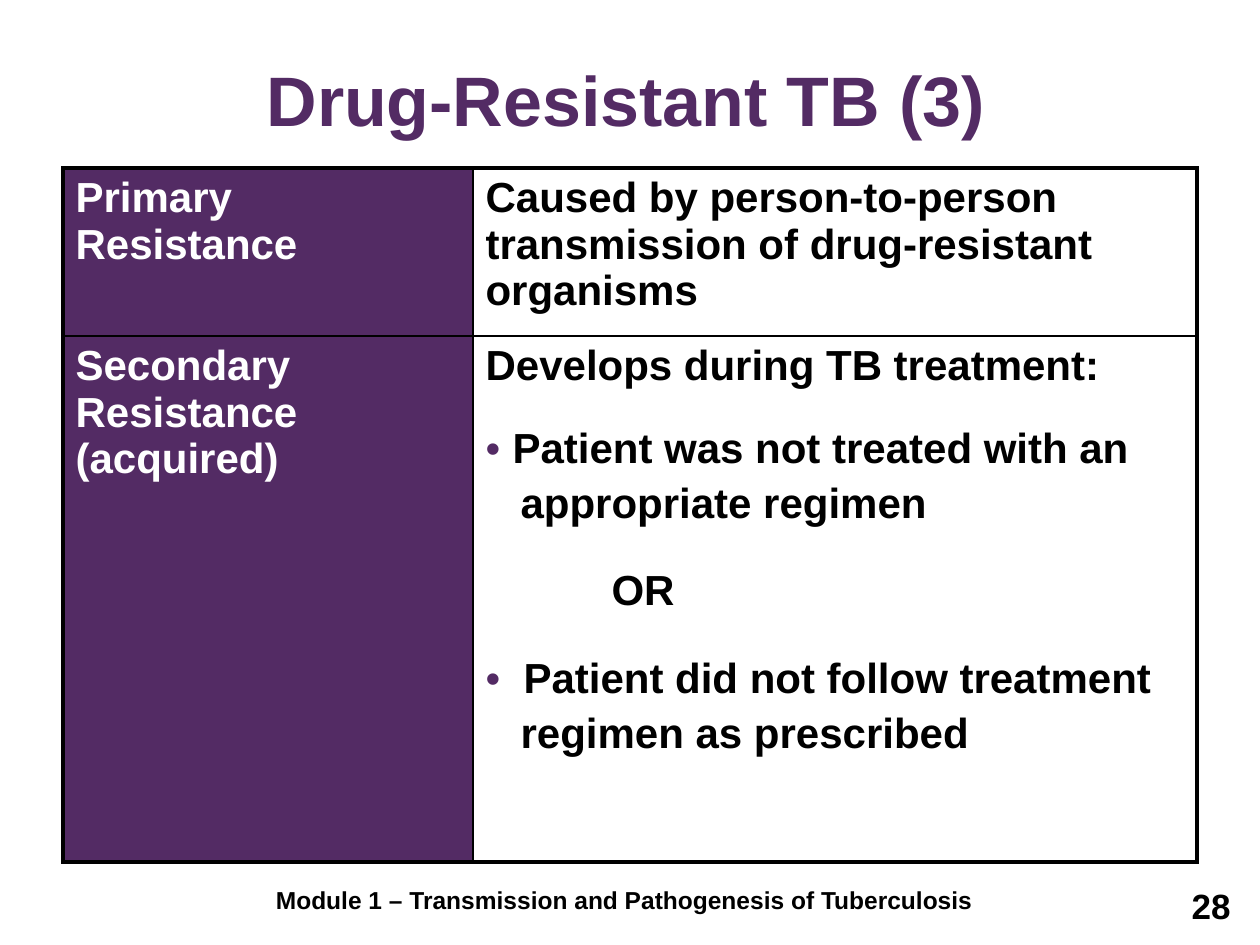
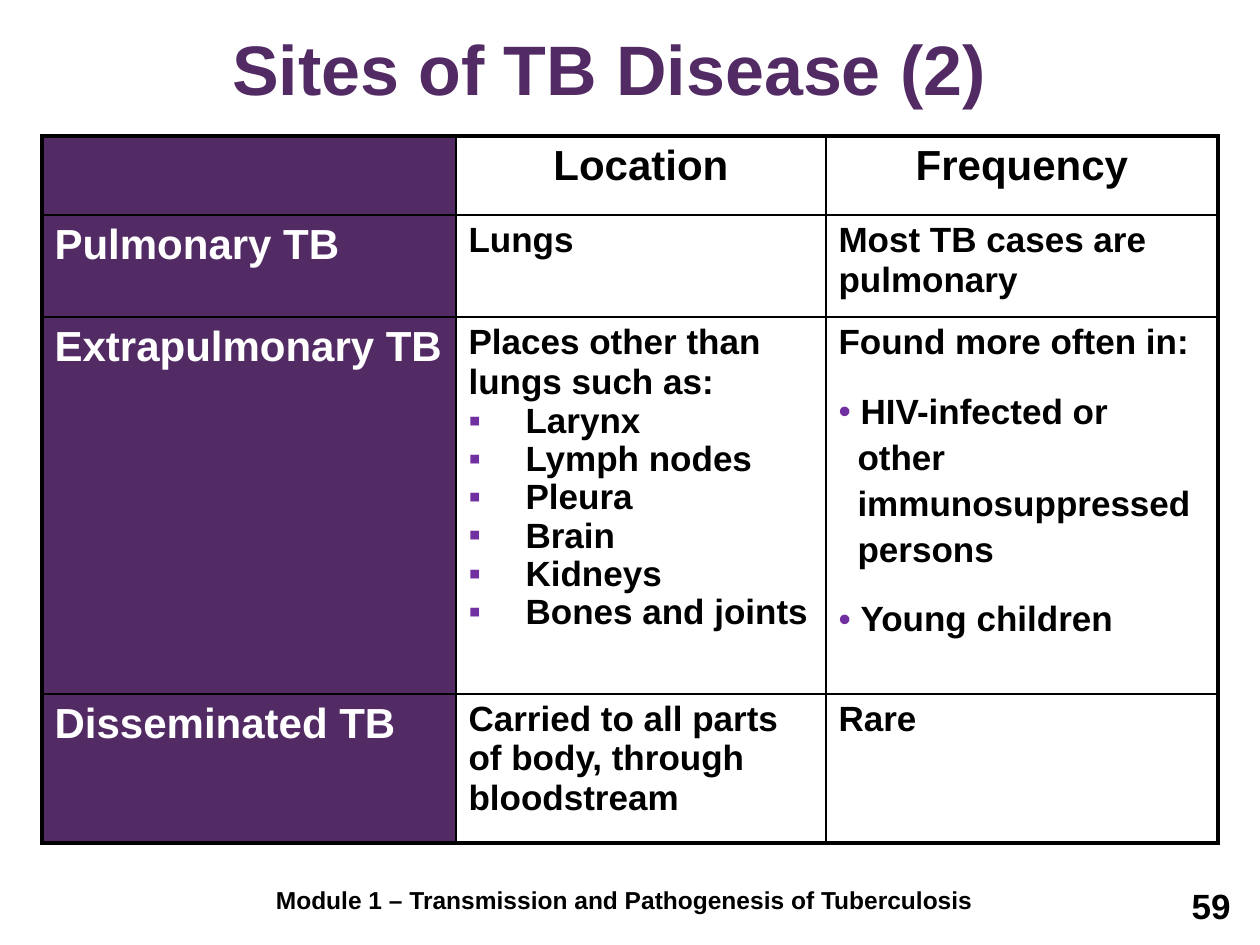
import dataclasses

import lxml.etree
import pptx
import pptx.dml.color
import pptx.enum.text
import pptx.oxml.ns
import pptx.util

PX = 914400 / 126
FONT = "Arial"
PURPLE = pptx.dml.color.RGBColor(0x53, 0x2B, 0x64)
VIOLET = pptx.dml.color.RGBColor(0x70, 0x30, 0xA0)
BLACK = pptx.dml.color.RGBColor(0, 0, 0)
WHITE = pptx.dml.color.RGBColor(255, 255, 255)
ALIGN = pptx.enum.text.PP_ALIGN
THICK, THIN = 2.25, 1
FOOTER = "Module 1 – Transmission and Pathogenesis of Tuberculosis"


@dataclasses.dataclass
class Line:
    """One paragraph of a cell: before in points, left and hang in px."""
    text: str
    before: float = 0
    left: int = 0
    hang: int = 0
    mark: str = ""
    tint: pptx.dml.color.RGBColor = VIOLET
    pitch: float = 1.0


def px(count):
    return pptx.util.Emu(round(count * PX))


def node(parent, tag, **attrs):
    return lxml.etree.SubElement(parent, pptx.oxml.ns.qn(tag), **attrs)


def style(par, size, color, align=ALIGN.LEFT):
    par.alignment = align
    for run in par.runs:
        font = run.font
        font.name, font.size, font.bold = FONT, pptx.util.Pt(size), True
        font.color.rgb = color


def indent(par, line):
    """Set the indent and, if the line has a mark, its bullet."""
    props = par._p.get_or_add_pPr()
    props.set("marL", str(px(line.left)))
    props.set("indent", str(px(-line.hang)))
    if line.mark:
        color = node(props, "a:buClr")
        node(color, "a:srgbClr", val=str(line.tint))
        node(props, "a:buFont", typeface=FONT)
        node(props, "a:buChar", char=line.mark)


def edge(cell, widths):
    """Draw the left, right, top and bottom borders, widths in points."""
    props = cell._tc.get_or_add_tcPr()
    for place, (side, width) in enumerate(zip("LRTB", widths)):
        border = node(props, "a:ln" + side, w=str(pptx.util.Pt(width)))
        fill = node(border, "a:solidFill")
        node(fill, "a:srgbClr", val=str(BLACK))
        props.insert(place, border)


def write(cell, lines, size, color, align):
    frame = cell.text_frame
    for place, line in enumerate(lines):
        par = frame.add_paragraph() if place else frame.paragraphs[0]
        par.text = line.text
        indent(par, line)
        par.space_before = pptx.util.Pt(line.before)
        par.line_spacing = line.pitch
        style(par, size, color, align)


def grid(slide, left, top, cols, rows, cells, size, header=False):
    """Add a table with a purple first column and a thick outer frame."""
    table = slide.shapes.add_table(len(rows), len(cols), px(left), px(top),
                                   px(sum(cols)), px(sum(rows))).table
    table.first_row = table.horz_banding = False
    for col, width in zip(table.columns, cols):
        col.width = px(width)
    for row, height in zip(table.rows, rows):
        row.height = px(height)
    for r, row in enumerate(cells):
        for c, lines in enumerate(row):
            cell = table.cell(r, c)
            label, head = c == 0, header and r == 0
            if label:
                cell.fill.solid()
                cell.fill.fore_color.rgb = PURPLE
            else:
                cell.fill.background()
            outer = (label, c == len(cols) - 1, r == 0, r == len(rows) - 1)
            edge(cell, [THICK if out else THIN for out in outer])
            write(cell, lines, 24 if label or head else size,
                  WHITE if label else BLACK,
                  ALIGN.CENTER if head else ALIGN.LEFT)


def title(slide, text, left, top, height):
    shape = slide.shapes.title
    shape.left, shape.top = px(left), px(top)
    shape.width, shape.height = px(1134), px(height)
    frame = shape.text_frame
    frame.text = text
    frame.auto_size = pptx.enum.text.MSO_AUTO_SIZE.NONE
    frame.vertical_anchor = pptx.enum.text.MSO_ANCHOR.BOTTOM
    style(frame.paragraphs[0], 40, PURPLE, ALIGN.CENTER)


def label(slide, text, left, top, width, size, align):
    box = slide.shapes.add_textbox(px(left), px(top), px(width), px(66))
    box.text_frame.word_wrap = True
    box.text_frame.text = text
    style(box.text_frame.paragraphs[0], size, BLACK, align)


def page(deck, number):
    """Add a title-only slide with the shared footer and its number."""
    slide = deck.slides.add_slide(deck.slide_layouts[5])
    label(slide, FOOTER, 220, 879, 809, 14, ALIGN.CENTER)
    label(slide, str(number), 949, 878, 294, 20, ALIGN.RIGHT)
    return slide


def drugs(deck):
    slide = page(deck, 28)
    title(slide, "Drug-Resistant TB (3)", 59, 53, 94)
    causes = [
        Line("Develops during TB treatment:"),
        Line("Patient was not treated with an", 20.6, 27, 27, "•", PURPLE),
        Line("appropriate regimen", 4.8, 35),
        Line("OR", 23.2, 126),
        Line("Patient did not follow treatment", 23.2, 38, 38, "•", PURPLE),
        Line("regimen as prescribed", 4.8, 35),
    ]
    cells = [
        [[Line("Primary Resistance")],
         [Line("Caused by person-to-person transmission of "
               "drug-resistant organisms")]],
        [[Line("Secondary Resistance (acquired)")], causes],
    ]
    grid(slide, 63, 168, [410, 724], [168, 526], cells, 24)


def sites(deck):
    slide = page(deck, 59)
    title(slide, "Sites of TB Disease (2)", 42, 0, 116)
    organs = ["Larynx", "Lymph nodes", "Pleura", "Brain", "Kidneys",
              "Bones and joints"]
    places = [Line("Places other than lungs such as:")]
    places += [Line(organ, 4, 57, 57, "▪", pitch=0.8) for organ in organs]
    groups = [Line("Found more often in:"),
              Line("HIV-infected or", 17.2, 22, 22, "•")]
    groups += [Line(text, 4, 19)
               for text in ("other", "immunosuppressed", "persons")]
    groups.append(Line("Young children", 17.2, 22, 22, "•"))
    cells = [
        [[], [Line("Location")], [Line("Frequency")]],
        [[Line("Pulmonary TB")], [Line("Lungs")],
         [Line("Most TB cases are pulmonary")]],
        [[Line("Extrapulmonary TB")], places, groups],
        [[Line("Disseminated TB")],
         [Line("Carried to all parts of body, through bloodstream")],
         [Line("Rare")]],
    ]
    grid(slide, 42, 136, [414, 370, 392], [79, 102, 377, 149], cells, 20,
         header=True)


def main():
    deck = pptx.Presentation()
    deck.slide_width, deck.slide_height = px(1260), px(945)
    drugs(deck)
    sites(deck)
    deck.save("out.pptx")


if __name__ == "__main__":
    main()
